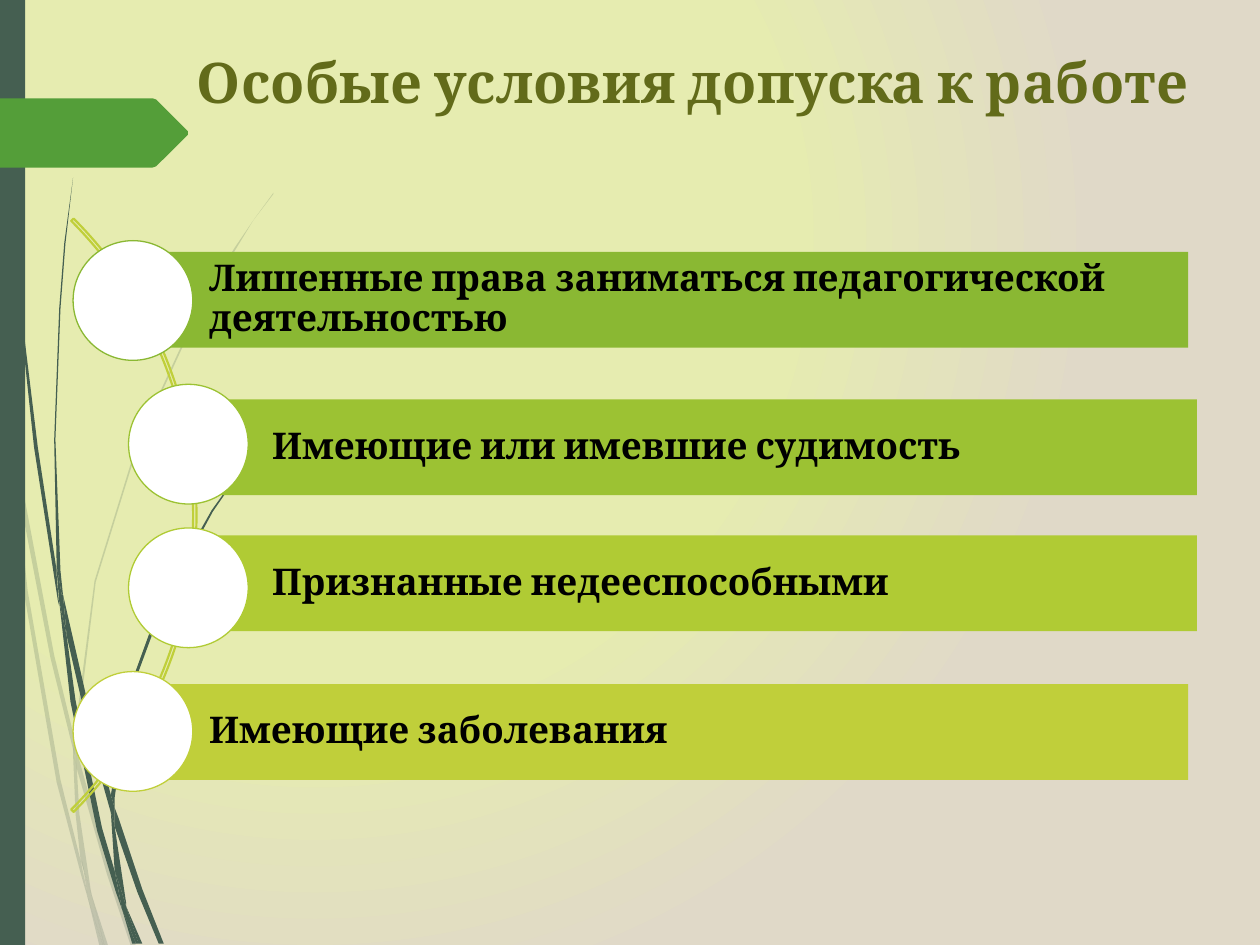
from lxml.etree import SubElement
from pptx import Presentation
from pptx.dml.color import RGBColor
from pptx.enum.shapes import MSO_SHAPE as SHAPE
from pptx.enum.text import MSO_ANCHOR as ANCHOR, PP_ALIGN as ALIGN
from pptx.oxml import parse_xml
from pptx.oxml.ns import nsdecls, qn
from pptx.util import Pt

PX = 9144  # 100 px to the inch

BLACK = RGBColor(0x00, 0x00, 0x00)
WHITE = RGBColor(0xFF, 0xFF, 0xFF)
OLIVE = RGBColor(0x62, 0x6B, 0x1A)
SLATE = RGBColor(0x45, 0x5F, 0x51)
GREEN = RGBColor(0x54, 0x9E, 0x39)
LEAF = RGBColor(0x8A, 0xB8, 0x33)
GRASS = RGBColor(0x9C, 0xC2, 0x33)
LIME = RGBColor(0xB0, 0xCB, 0x34)
YELLOW = RGBColor(0xC0, 0xCF, 0x3A)

FAINT_WISPS = [
    [(8, 350), (6, 322), (0, 282), (0, 299), (7, 344)],
    [(40, 522), (59, 599), (59, 586), (43, 520), (10, 345), (12, 376)],
    [(64, 607), (61, 596), (61, 610), (85, 694), (104, 751), (108, 751), (88, 692)],
    [(83, 751), (86, 751), (73, 711)],
    [(64, 683), (48, 619), (22, 469), (12, 376), (8, 350), (19, 470), (45, 621),
     (64, 693), (70, 714), (69, 707)],
    [(58, 599), (60, 646), (64, 683), (67, 692), (73, 711), (72, 706), (63, 646),
     (61, 610), (61, 608)],
    [(61, 584), (76, 462), (111, 349), (159, 245), (187, 198), (201, 175), (217, 154),
     (217, 153), (201, 175), (186, 197), (158, 244), (110, 348), (75, 461), (59, 584),
     (59, 586), (61, 596)],
    [(70, 714), (79, 751), (82, 751)],
    [(61, 608), (61, 610), (61, 596), (59, 586), (58, 599)],
    [(67, 692), (65, 683), (69, 707), (70, 714), (82, 751), (83, 751), (73, 711)],
]
DARK_WISPS = [
    [(5, 110), (14, 233), (27, 355), (46, 477), (47, 481), (45, 457), (45, 453),
     (30, 355), (15, 232), (6, 109), (4, 48), (3, 0), (2, 0), (3, 48)],
    [(73, 592), (88, 645), (88, 633), (88, 631), (77, 590), (50, 472), (53, 505)],
    [(94, 649), (91, 641), (91, 656), (109, 708), (126, 749), (130, 749), (113, 706)],
    [(91, 691), (81, 657), (60, 556), (53, 505), (47, 477), (56, 557), (77, 659),
     (92, 708), (97, 722), (96, 717)],
    [(50, 472), (48, 453), (44, 349), (48, 245), (52, 193), (58, 141), (51, 193),
     (47, 245), (43, 349), (45, 449), (49, 472)],
    [(110, 749), (113, 749), (100, 719)],
    [(47, 477), (53, 505), (50, 472), (49, 472), (45, 449), (45, 453)],
    [(91, 633), (103, 552), (131, 476), (169, 406), (191, 374), (203, 359), (216, 344),
     (215, 344), (203, 358), (191, 373), (168, 405), (129, 474), (101, 551), (88, 631),
     (91, 641)],
    [(97, 722), (105, 749), (108, 749)],
    [(88, 645), (91, 691), (96, 706), (100, 719), (100, 716), (91, 656), (90, 651)],
    [(88, 645), (90, 651), (91, 656), (91, 641), (88, 631), (88, 633)],
    [(96, 706), (91, 691), (96, 717), (97, 722), (108, 749), (110, 749), (100, 719)],
]
TAG = [(149, 107), (124, 132), (121, 133), (0, 133), (0, 78), (121, 78), (124, 79), (149, 104)]

# text, colour, bar left, bar top, bar width, circle left
ITEMS = [
    ("Лишенные права заниматься педагогической деятельностью", LEAF, 106, 200, 837, 58),
    ("Имеющие или имевшие судимость", GRASS, 156, 317, 794, 102),
    ("Признанные недееспособными", LIME, 156, 425, 794, 102),
    ("Имеющие заболевания", YELLOW, 106, 543, 837, 58),
]
BAR_H, CIRCLE, CIRCLE_TOP, CIRCLE_STEP = 76, 95, 191, 114


def paint(sp, fill=None, line=None, width=1.0, alpha=None):
    """Set fill, outline and opacity (percent) of a shape, without shadow."""
    sp.shadow.inherit = False
    if fill is None:
        sp.fill.background()
    else:
        sp.fill.solid()
        sp.fill.fore_color.rgb = fill
    if alpha is not None:
        colour = sp._element.spPr.find(qn("a:solidFill")).find(qn("a:srgbClr"))
        SubElement(colour, qn("a:alpha"), val=str(alpha * 1000))
    if line is None:
        sp.line.fill.background()
    else:
        sp.line.color.rgb = line
        sp.line.width = Pt(width)


def write(tf, text, size=21, color=BLACK, align=ALIGN.LEFT, anchor=ANCHOR.MIDDLE, spacing=None):
    tf.word_wrap = True
    tf.vertical_anchor = anchor
    p = tf.paragraphs[0]
    p.alignment = align
    p.line_spacing = spacing
    r = p.add_run()
    r.text = text
    r.font.name = "Cambria"
    r.font.size = Pt(size)
    r.font.bold = True
    r.font.color.rgb = color


prs = Presentation()
prs.slide_width, prs.slide_height = 1000 * PX, 750 * PX
slide = prs.slides.add_slide(prs.slide_layouts[5])
shapes = slide.shapes

# Background: radial gradient
slide.background.fill.solid()
solid = slide._element.find(".//" + qn("p:bgPr")).find(qn("a:solidFill"))
solid.getparent().replace(solid, parse_xml(
    f'<a:gradFill {nsdecls("a")} rotWithShape="1"><a:gsLst>'
    '<a:gs pos="60000"><a:srgbClr val="E6ECB0"/></a:gs>'
    '<a:gs pos="100000"><a:srgbClr val="E0D9C8"/></a:gs></a:gsLst>'
    '<a:path path="circle"><a:fillToRect l="50000" t="50000" r="100000" b="100000"/></a:path>'
    '</a:gradFill>'))

# Left edge, wisps and tag
edge = shapes.add_shape(SHAPE.RECTANGLE, 0, 0, 20 * PX, 750 * PX)
paint(edge, SLATE)
for outlines, color, alpha in ((FAINT_WISPS, SLATE, 20), (DARK_WISPS, SLATE, None),
                               ([TAG], GREEN, None)):
    for start, *points in outlines:
        builder = shapes.build_freeform(*start, scale=PX)
        builder.add_line_segments(points, close=True)
        paint(builder.convert_to_shape(), color, alpha=alpha)

# Title
title = shapes.title
title.left, title.top, title.width, title.height = 110 * PX, 33 * PX, 880 * PX, 125 * PX
write(title.text_frame, "Особые условия допуска к работе", size=32, color=OLIVE,
      align=ALIGN.CENTER, anchor=ANCHOR.TOP)

# Arc with the four items along it
arc = shapes.add_shape(SHAPE.BLOCK_ARC, -510 * PX, 76 * PX, 666 * PX, 666 * PX)
for i, value in enumerate((189, 27, 0.004)):
    arc.adjustments[i] = value
paint(arc, line=YELLOW, width=1.25)

for i, (text, color, left, top, width, circle_left) in enumerate(ITEMS):
    bar = shapes.add_shape(SHAPE.RECTANGLE, left * PX, top * PX, width * PX, BAR_H * PX)
    paint(bar, color)
    tf = bar.text_frame
    tf.margin_left = 60 * PX
    tf.margin_top = tf.margin_right = tf.margin_bottom = 6 * PX
    write(tf, text, spacing=0.9)
    circle = shapes.add_shape(SHAPE.OVAL, circle_left * PX, (CIRCLE_TOP + i * CIRCLE_STEP) * PX,
                              CIRCLE * PX, CIRCLE * PX)
    paint(circle, WHITE, line=color, width=0.75)

prs.save("out.pptx")
